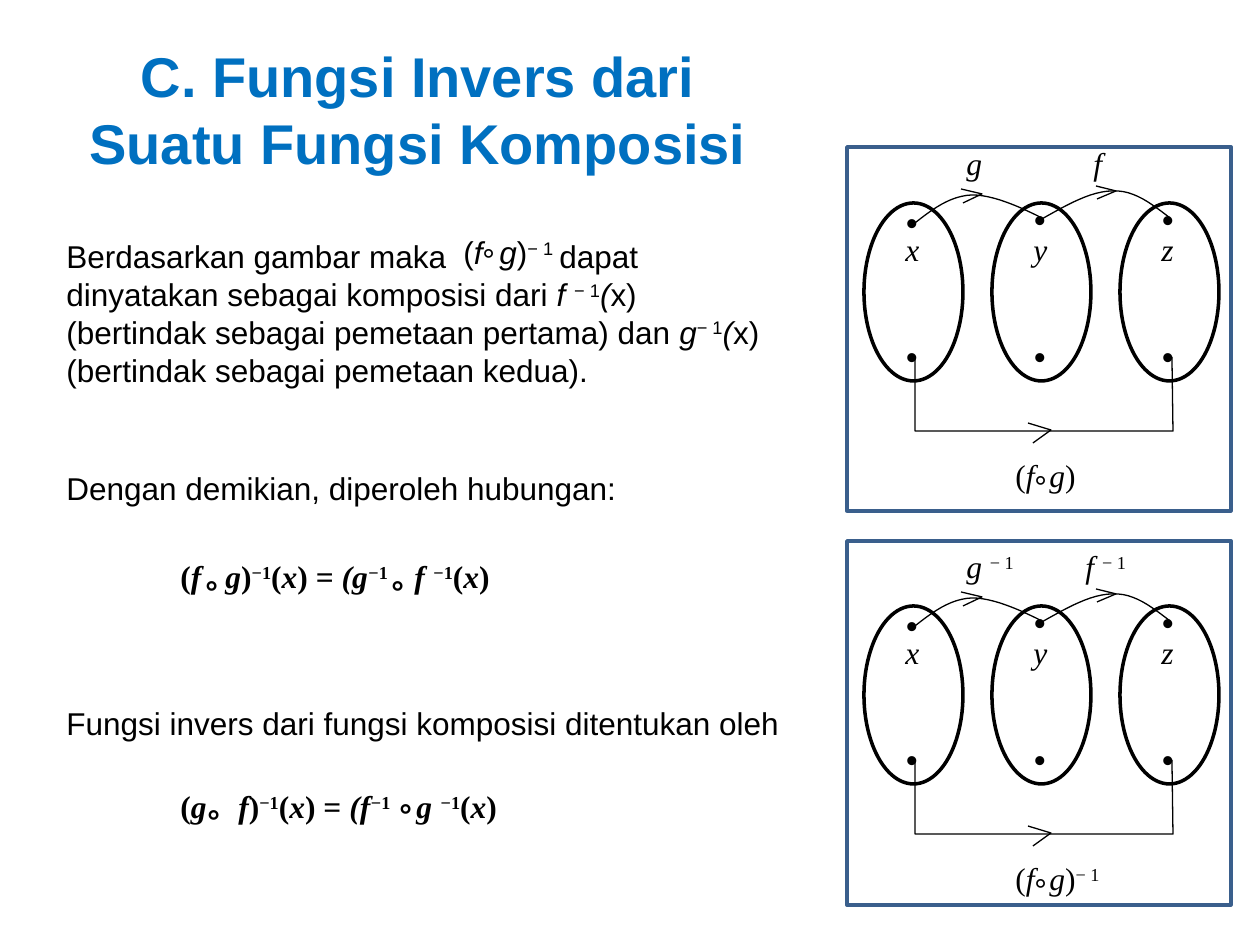
from lxml import etree
from pptx import Presentation
from pptx import util as u
from pptx.dml.color import RGBColor
from pptx.enum import shapes, text
from pptx.oxml.ns import qn

EMU_PER_PX = 914400 / 126
SANS, SERIF = "Arial", "Times New Roman"
BLACK, WHITE, TITLE_BLUE, FRAME_BLUE = "000000", "FFFFFF", "0070C0", "3A5F8C"
DIAGRAM_STEP = 403
SET_STEP = 128


def px(length):
    return u.Emu(round(length * EMU_PER_PX))


def colour(hex_string):
    return RGBColor.from_string(hex_string)


def add_tabs(paragraph, stops):
    tab_list = etree.SubElement(paragraph._p.get_or_add_pPr(), qn("a:tabLst"))
    for stop in stops:
        etree.SubElement(tab_list, qn("a:tab"), pos=str(px(stop)), algn="l")


def add_text(parent, box, paragraphs, font=SANS, size=18, hue=BLACK, bold=False,
             wrap=True, tabs=(), gaps=(0,), align=text.PP_ALIGN.LEFT):
    """Each paragraph is a list of (words, style); style holds i (italic), ^ (superscript)."""
    frame = parent.add_textbox(*map(px, box)).text_frame
    frame.word_wrap = wrap
    frame.auto_size = text.MSO_AUTO_SIZE.SHAPE_TO_FIT_TEXT
    for index, (pieces, gap) in enumerate(zip(paragraphs, gaps)):
        paragraph = frame.add_paragraph() if index else frame.paragraphs[0]
        paragraph.alignment = align
        if gap:
            paragraph.space_before = u.Pt(gap)
        if tabs:
            add_tabs(paragraph, tabs)
        for words, style in pieces:
            run = paragraph.add_run()
            run.text = words
            run.font.name, run.font.size, run.font.bold = font, u.Pt(size), bold
            run.font.italic = "i" in style
            run.font.color.rgb = colour(hue)
            if "^" in style:
                run._r.get_or_add_rPr().set("baseline", "30000")


def add_ring(parent, left, top, bold=False):
    """The composition sign between two function names."""
    add_text(parent, (left, top, 38, 50), [[("°", "")]], bold=bold, wrap=False)


def add_outline(parent, preset, box, line, fill=None):
    shape = parent.add_shape(preset, *map(px, box))
    shape.shadow.inherit = False
    if fill:
        shape.fill.solid()
        shape.fill.fore_color.rgb = colour(fill)
    else:
        shape.fill.background()
    shape.line.color.rgb = colour(line)
    shape.line.width = u.Pt(2)


def add_path(parent, points):
    points = [(px(x), px(y)) for x, y in points]
    builder = parent.build_freeform(*points[0])
    builder.add_line_segments(points[1:], close=False)
    path = builder.convert_to_shape()
    path.shadow.inherit = False
    path.fill.background()
    path.line.color.rgb = colour(BLACK)
    path.line.width = u.Pt(0.75)


def curve(points, steps=12):
    """Points along joined cubic curves, given as start, then two controls and an end each."""
    trace = [points[0]]
    for start in range(0, len(points) - 1, 3):
        controls = points[start:start + 4]
        for step in range(1, steps + 1):
            t = step / steps
            weights = ((1 - t) ** 3, 3 * t * (1 - t) ** 2, 3 * t * t * (1 - t), t ** 3)
            trace.append(tuple(sum(w * p[axis] for w, p in zip(weights, controls))
                               for axis in (0, 1)))
    return trace


def add_diagram(slide, shift, frame_top, power):
    """Three sets with arrows; power is the exponent on every function name, if any."""
    parent = slide.shapes.add_group_shape().shapes
    exponent = [(power, "^")] if power else []
    name_gap = " " if power else ""

    def moved(points):
        return [(x, y + shift) for x, y in points]

    for index in range(3):
        add_outline(parent, shapes.MSO_SHAPE.OVAL,
                    (864 + SET_STEP * index, 203 + shift, 99, 178), BLACK, WHITE)
    for index, (letter, upper) in enumerate(zip("xyz", (197, 194, 194))):
        left = 894 + SET_STEP * index
        for top in (upper, 331):
            add_text(parent, (left, top + shift, 40, 50), [[("•", "")]], bold=True)
        add_text(parent, (left - 1, 224 + shift, 39, 50), [[(letter, "i")]],
                 font=SERIF, wrap=False)

    arcs = (
        [(915, 223), (933, 209), (950, 196), (972, 195), (993, 195), (1018, 206), (1042, 218)],
        [(1042, 219), (1067, 205), (1091, 191), (1113, 191), (1134, 190), (1152, 204), (1170, 218)],
    )
    for arc in arcs:
        add_path(parent, curve(moved(arc)))
    straight_paths = (
        [(915, 357), (915, 431), (1173, 431), (1172, 357)],
        [(961, 189), (982, 194), (963, 203)],
        [(1096, 186), (1116, 191), (1097, 199)],
        [(1028, 423), (1051, 430), (1033, 443)],
    )
    for points in straight_paths:
        add_path(parent, moved(points))

    names = (("g", 954, 77 if power else 42), ("f", 1073 if power else 1081, 69 if power else 34))
    for name, left, width in names:
        add_text(parent, (left, 138 + shift, width, 50),
                 [[(name + name_gap, "i")] + exponent], font=SERIF, wrap=False)
    add_text(parent, (1003, 450 + shift, 121 if power else 93, 50),
             [[("(", ""), ("f\tg", "i"), (")", "")] + exponent], font=SERIF, tabs=(34,))
    add_ring(parent, 1022, 461 + shift)
    add_outline(parent, shapes.MSO_SHAPE.RECTANGLE, (847, frame_top, 384, 364), FRAME_BLUE)


def add_formula(parent, top, outer, inner, tabs, rings):
    """outer is the composed pair on the left side, inner the two names on the right."""
    pieces = [("(", ""), ("\t".join(outer), "i"), (")", ""), ("−1", "^"), ("(", ""),
              ("x", "i"), (") = ", ""), ("(" + inner[0], "i"), ("−", "i^"), ("1\t", "^"),
              (inner[1] + " ", "i"), ("−", "i^"), ("1", "^"), ("(", ""), ("x", "i"), (")", "")]
    add_text(parent, (168, top, 386, 52), [pieces], font=SERIF, bold=True, tabs=tabs)
    for left, ring_top in rings:
        add_ring(parent, left, ring_top, bold=True)


def add_explanation(parent):
    add_text(parent, (451, 227, 126, 50),
             [[("(", ""), ("f\tg", "i"), (")", ""), ("− 1", "^")]], tabs=(36,))
    add_ring(parent, 470, 234)
    paragraphs = [
        [("Berdasarkan gambar maka\tdapat dinyatakan sebagai komposisi dari ", ""),
         ("f ", "i"), ("− 1", "^"), ("(", "i"),
         ("x) (bertindak sebagai pemetaan pertama) dan ", ""),
         ("g", "i"), ("− 1", "^"), ("(", "i"),
         ("x) (bertindak sebagai pemetaan kedua).", "")],
        [("Dengan demikian, diperoleh hubungan:", "")],
        [("Fungsi invers dari fungsi komposisi ditentukan oleh", "")],
    ]
    add_text(parent, (54, 231, 743, 522), paragraphs, tabs=(493,), gaps=(0, 46, 113))


def main():
    deck = Presentation()
    deck.slide_width, deck.slide_height = px(1260), px(945)
    slide = deck.slides.add_slide(deck.slide_layouts[6])
    add_text(slide.shapes, (49, 35, 738, 149),
             [[("C. Fungsi Invers dari Suatu Fungsi Komposisi", "")]],
             size=32, hue=TITLE_BLUE, bold=True, align=text.PP_ALIGN.CENTER)
    add_explanation(slide.shapes)
    add_formula(slide.shapes, 551, "fg", "gf", (45, 234), ((193, 566), (379, 566)))
    add_formula(slide.shapes, 781, "gf", "fg", (58, 236), ((195, 795), (387, 789)))
    add_diagram(slide, 0, 147, "")
    add_diagram(slide, DIAGRAM_STEP, 541, "− 1")
    deck.save("out.pptx")


if __name__ == "__main__":
    main()
